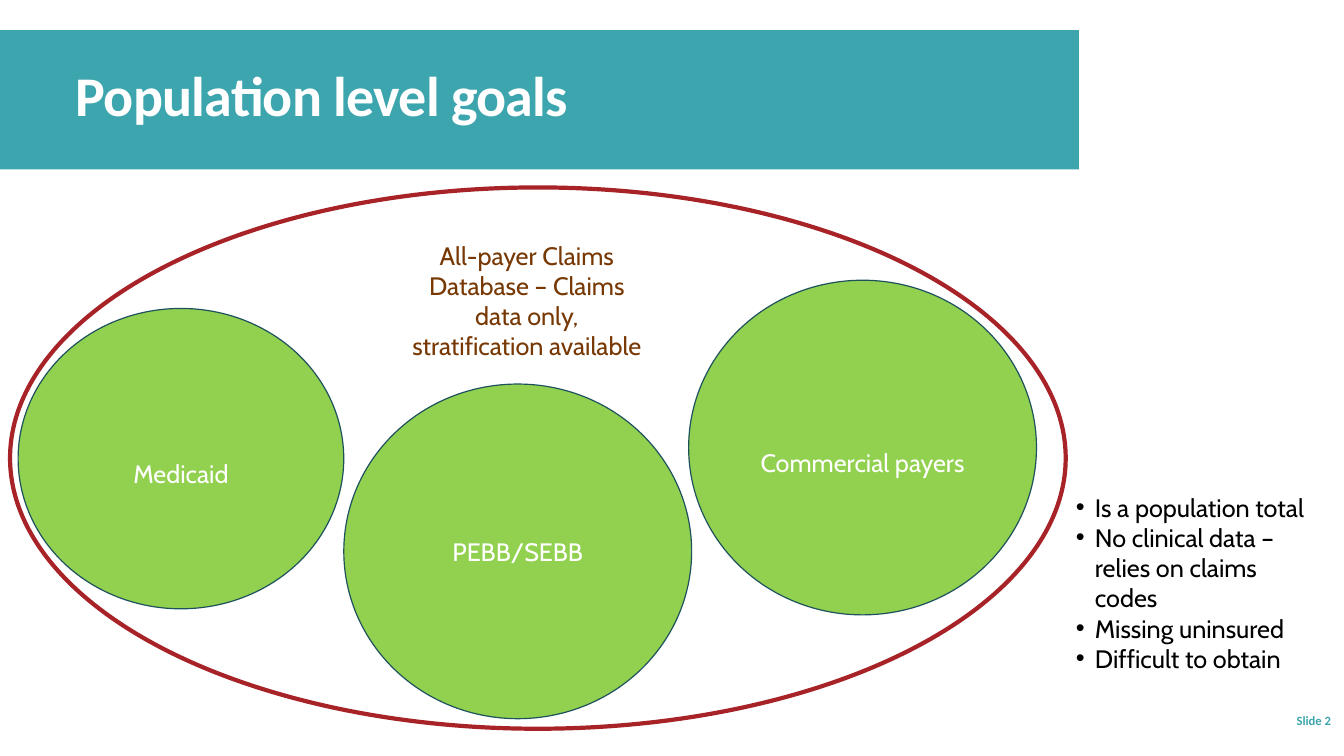
from lxml.etree import SubElement
from pptx import Presentation
from pptx.dml.color import RGBColor
from pptx.enum.shapes import MSO_SHAPE
from pptx.enum.text import MSO_ANCHOR, MSO_AUTO_SIZE, PP_ALIGN
from pptx.oxml.ns import qn
from pptx.util import Inches, Pt

COLORS = {
    "teal": "3DA5AD",
    "green": "92D050",
    "outline": "1C525C",
    "red": "A72327",
    "brown": "773804",
    "white": "FFFFFF",
    "black": "000000",
}


def style_paragraph(paragraph, color, size=18, name="Cabin", bold=False, align=PP_ALIGN.CENTER):
    paragraph.alignment = align
    font = paragraph.font
    font.name, font.size, font.bold = name, Pt(size), bold
    font.color.rgb = RGBColor.from_string(COLORS[color])


def add_plain_shape(kind, box, fill=None, line=None, line_width=0.85):
    shape = slide.shapes.add_shape(kind, *map(Inches, box))
    shape.shadow.inherit = False
    if fill:
        shape.fill.solid()
        shape.fill.fore_color.rgb = RGBColor.from_string(COLORS[fill])
    else:
        shape.fill.background()
    if line:
        shape.line.color.rgb = RGBColor.from_string(COLORS[line])
        shape.line.width = Pt(line_width)
    else:
        shape.line.fill.background()
    return shape


presentation = Presentation()
presentation.slide_width = Inches(13.33)
presentation.slide_height = Inches(7.5)
slide = presentation.slides.add_slide(presentation.slide_layouts[1])

# Title band, sent behind the title
band = add_plain_shape(MSO_SHAPE.RECTANGLE, (0, 0.3, 10.7, 1.38), fill="teal")
slide.shapes.title.element.addprevious(band.element)

# Title
title = slide.shapes.title
title.left, title.top, title.width, title.height = map(Inches, (0.65, 0.45, 9.9, 1.06))
title.text_frame.text = "Population level goals"
title.text_frame.vertical_anchor = MSO_ANCHOR.MIDDLE
title.text_frame.auto_size = MSO_AUTO_SIZE.NONE
heading = title.text_frame.paragraphs[0]
heading.line_spacing = 0.9
style_paragraph(heading, "white", 40, "Calibri", True, PP_ALIGN.LEFT)
heading.runs[0].font._element.set("spc", "-50")

# Payer circles: label, box, top inset that lowers the label
payers = [
    ("Medicaid", (0.18, 3.06, 3.23, 2.98), 0.35),
    ("Commercial payers", (6.83, 2.78, 3.45, 3.32), 0.35),
    ("PEBB/SEBB", (3.41, 3.81, 3.45, 3.32), 0.05),
]
for label, box, top_inset in payers:
    circle = add_plain_shape(MSO_SHAPE.OVAL, box, "green", "outline")
    circle.text_frame.text = label
    circle.text_frame.margin_top = Inches(top_inset)
    circle.text_frame.vertical_anchor = MSO_ANCHOR.MIDDLE
    style_paragraph(circle.text_frame.paragraphs[0], "white")

# Database ellipse around all payers
add_plain_shape(MSO_SHAPE.OVAL, (0.1, 1.86, 10.47, 5.37), line="red", line_width=3)

# Database caption
caption = slide.shapes.add_textbox(*map(Inches, (3.95, 2.33, 2.55, 1.31))).text_frame
caption.word_wrap = True
caption.text = "All-payer Claims Database – Claims data only, stratification available"
style_paragraph(caption.paragraphs[0], "brown")

# Limitations list
limitations = slide.placeholders[1]
limitations.left, limitations.top, limitations.width, limitations.height = map(
    Inches, (10.57, 4.83, 2.52, 2.22))
frame = limitations.text_frame
frame.auto_size = MSO_AUTO_SIZE.NONE
frame.text = "\n".join([
    "Is a population total",
    "No clinical data – relies on claims codes",
    "Missing uninsured",
    "Difficult to obtain",
])
for paragraph in frame.paragraphs:
    paragraph.space_before = Pt(0)
    properties = paragraph._p.get_or_add_pPr()
    properties.set("marL", str(Inches(0.19)))
    properties.set("indent", str(Inches(-0.19)))
    SubElement(properties, qn("a:buFont")).set("typeface", "Arial")
    SubElement(properties, qn("a:buChar")).set("char", "•")
    style_paragraph(paragraph, "black", align=PP_ALIGN.LEFT)

# Slide number
number = slide.shapes.add_textbox(*map(Inches, (11.63, 6.95, 1.67, 0.4))).text_frame
number.word_wrap = True
number.vertical_anchor = MSO_ANCHOR.MIDDLE
number.text = "Slide 2"
style_paragraph(number.paragraphs[0], "teal", 9, "Calibri", True, PP_ALIGN.RIGHT)

presentation.save("out.pptx")
